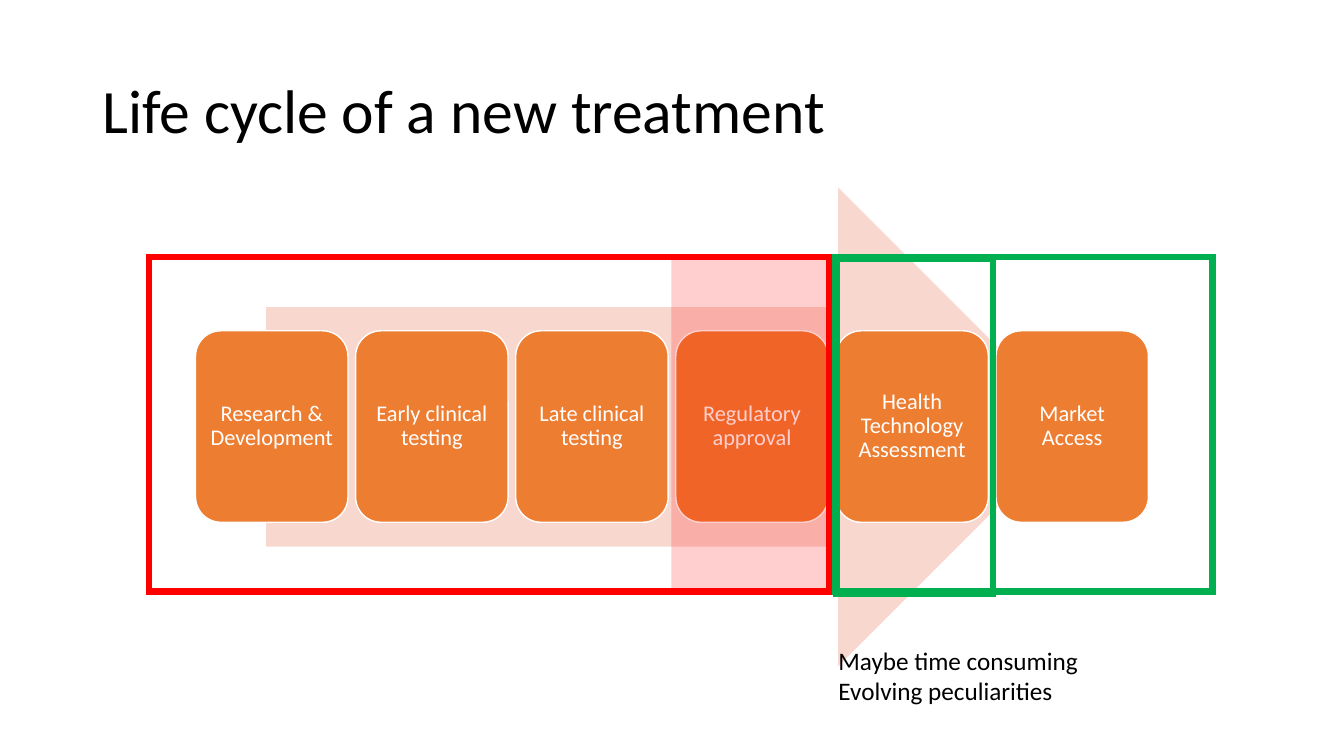
from dataclasses import dataclass
from typing import Optional

from lxml.etree import SubElement
from pptx import Presentation
from pptx.dml.color import RGBColor as Rgb
from pptx.enum.shapes import MSO_SHAPE as Preset
from pptx.enum.text import MSO_ANCHOR as Anchor, MSO_AUTO_SIZE as AutoSize, PP_ALIGN as Align
from pptx.oxml.ns import qn
from pptx.util import Pt


@dataclass(frozen=True)
class Theme:
    font: str = "Calibri"
    black: str = "000000"
    white: str = "FFFFFF"
    orange: str = "ED7D31"
    blush: str = "F8D7CE"
    red: str = "FF0000"
    green: str = "00B050"
    title_size: float = 44
    step_size: float = 16
    note_size: float = 18
    step_line: float = 1
    frame_line: float = 4.5


@dataclass(frozen=True)
class Area:
    left: float
    top: float
    width: float
    height: float

    def lengths(self) -> tuple:
        return Pt(self.left), Pt(self.top), Pt(self.width), Pt(self.height)


@dataclass(frozen=True)
class Block:
    area: Area
    preset: Preset = Preset.RECTANGLE
    fill: Optional[str] = None
    line: Optional[str] = None
    line_width: float = 0
    opacity: int = 100


THEME = Theme()
STEPS = ["Research & Development", "Early clinical testing", "Late clinical testing",
         "Regulatory approval", "Health Technology Assessment", "Market Access"]
FIRST_STEP = Area(139.7, 236.3, 108.9, 136.8)
STEP_PITCH = 114.35
STEP_INSET = 10.4
NOTES = ["Maybe time consuming", "Evolving peculiarities"]

ARROW = Block(Area(190.1, 133.9, 579.6, 342), Preset.RIGHT_ARROW, fill=THEME.blush)
HIGHLIGHTS = [
    Block(Area(106.6, 183.6, 486, 239), line=THEME.red, line_width=THEME.frame_line),
    Block(Area(596.2, 183.6, 270, 239), line=THEME.green, line_width=THEME.frame_line),
    Block(Area(479.5, 185, 112.3, 239), fill=THEME.red, opacity=19),
    Block(Area(597.6, 185, 111.6, 239), line=THEME.green, line_width=THEME.frame_line),
]


def set_values(target, values: dict) -> None:
    for name, value in values.items():
        setattr(target, name, value)


def write(shape, lines: list, size: float, color: str, frame_format: dict, para_format: dict) -> None:
    frame = shape.text_frame
    set_values(frame, {"word_wrap": True, **frame_format})
    for index, line in enumerate(lines):
        para = frame.paragraphs[0] if index == 0 else frame.add_paragraph()
        set_values(para, para_format)
        span = para.add_run()
        span.text = line
        set_values(span.font, {"name": THEME.font, "size": Pt(size)})
        span.font.color.rgb = Rgb.from_string(color)


def draw_block(page, block: Block):
    shape = page.shapes.add_shape(block.preset, *block.area.lengths())
    shape.shadow.inherit = False
    if block.fill:
        shape.fill.solid()
        shape.fill.fore_color.rgb = Rgb.from_string(block.fill)
        if block.opacity < 100:
            color = shape.fill._xPr.find(qn("a:solidFill"))[0]
            SubElement(color, qn("a:alpha"), val=str(block.opacity * 1000))
    else:
        shape.fill.background()
    if block.line:
        shape.line.color.rgb = Rgb.from_string(block.line)
        shape.line.width = Pt(block.line_width)
        SubElement(shape.line._get_or_add_ln(), qn("a:miter"), lim="800000")
    else:
        shape.line.fill.background()
    return shape


def draw_step(page, index: int, label: str) -> None:
    first = FIRST_STEP
    area = Area(first.left + index * STEP_PITCH, first.top, first.width, first.height)
    shape = draw_block(page, Block(area, Preset.ROUNDED_RECTANGLE, THEME.orange,
                                   THEME.white, THEME.step_line))
    sides = ("left", "top", "right", "bottom")
    # The rounded preset insets its text area by itself
    insets = {f"margin_{side}": Pt(STEP_INSET / 2) for side in sides}
    write(shape, [label], THEME.step_size, THEME.white,
          {"vertical_anchor": Anchor.MIDDLE, **insets},
          {"alignment": Align.CENTER, "line_spacing": 0.9})


def main() -> None:
    deck = Presentation()
    set_values(deck, {"slide_width": Pt(960), "slide_height": Pt(540)})
    page = deck.slides.add_slide(deck.slide_layouts[6])

    # Title
    box = page.shapes.add_textbox(*Area(66, 28.8, 828, 104.4).lengths())
    write(box, ["Life cycle of a new treatment"], THEME.title_size, THEME.black,
          {"vertical_anchor": Anchor.MIDDLE}, {"line_spacing": 0.9})

    # Process arrow and its steps
    draw_block(page, ARROW)
    for index, label in enumerate(STEPS):
        draw_step(page, index, label)

    # Frames and tint over the phases
    for block in HIGHLIGHTS:
        draw_block(page, block)

    # Note under the assessment step
    box = page.shapes.add_textbox(*Area(591.8, 457.2, 235.4, 50.9).lengths())
    write(box, NOTES, THEME.note_size, THEME.black,
          {"auto_size": AutoSize.SHAPE_TO_FIT_TEXT}, {})

    deck.save("out.pptx")


if __name__ == "__main__":
    main()
